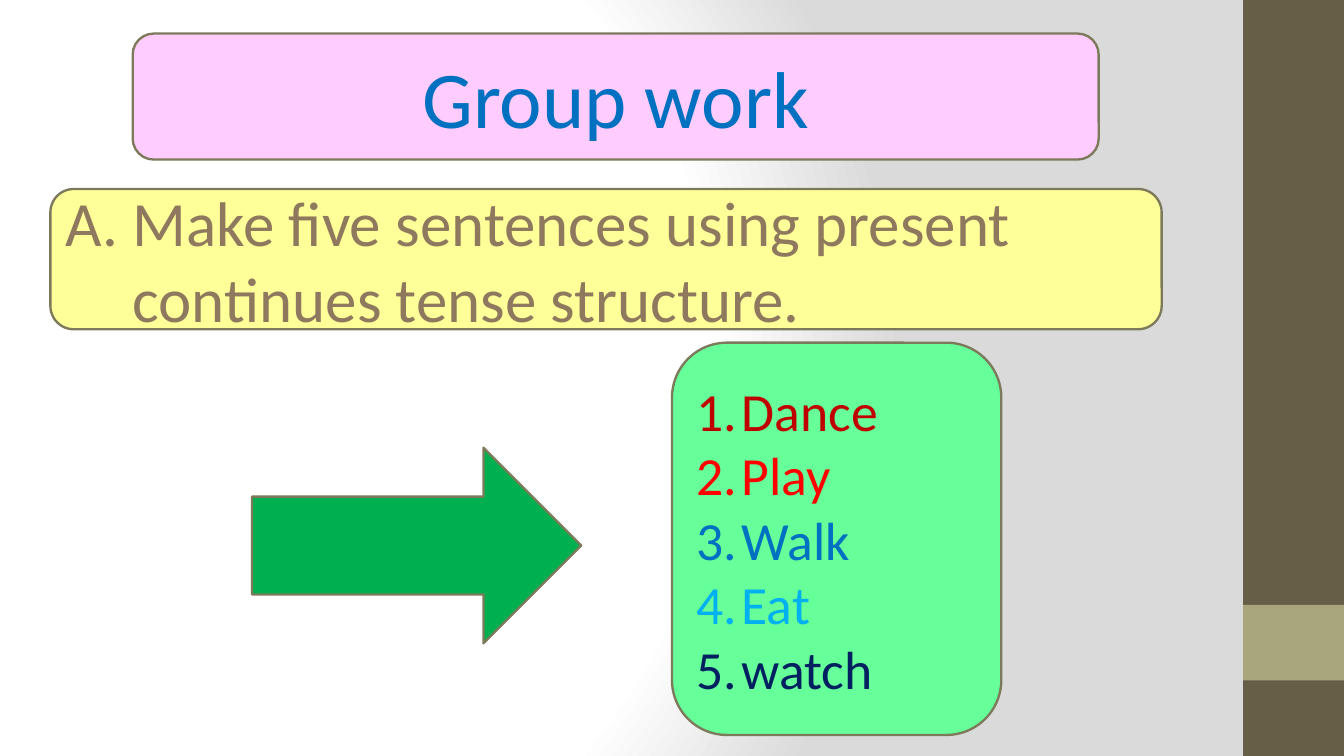
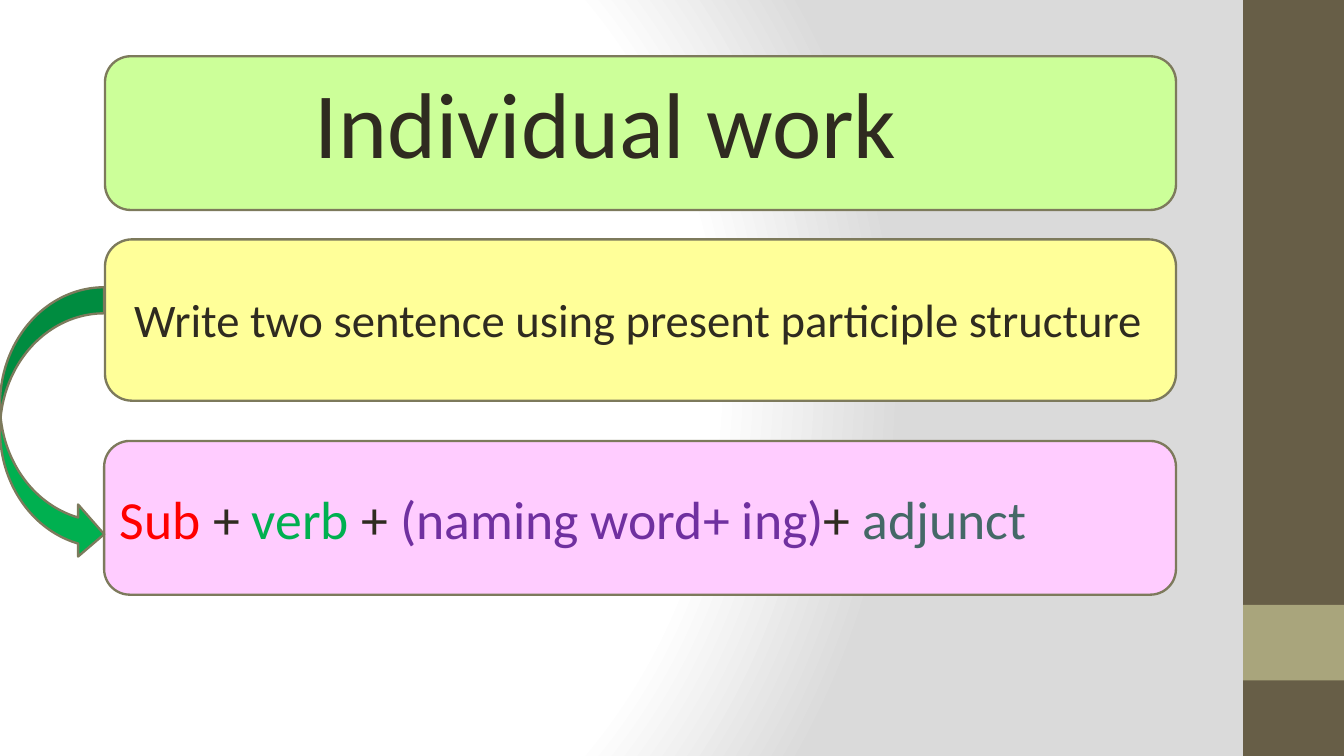
from dataclasses import dataclass

from pptx import Presentation
from pptx.dml.color import RGBColor
from pptx.enum.shapes import MSO_SHAPE as Preset
from pptx.enum.text import MSO_ANCHOR as Anchor, MSO_AUTO_SIZE as AutoSize, PP_ALIGN as Align
from pptx.oxml import parse_xml
from pptx.oxml.ns import nsdecls, qn
from pptx.util import Inches, Pt


@dataclass(frozen=True)
class Theme:
    font: str = "Calibri"
    white: str = "FFFFFF"
    grey: str = "DADADA"
    band: str = "675E47"
    accent: str = "A9A57C"
    outline: str = "7D7A5C"
    ink: str = "2F2B20"
    brown: str = "8E795E"
    pink: str = "FFCCFF"
    yellow: str = "FFFF99"
    mint: str = "66FF99"
    lime: str = "CCFF99"
    green: str = "00B050"
    crimson: str = "C00000"
    red: str = "FF0000"
    blue: str = "0070C0"
    sky: str = "00B0F0"
    navy: str = "002060"
    purple: str = "7030A0"
    teal: str = "456867"
    group_title: int = 69
    individual_title: int = 80
    task: int = 54
    body: int = 46
    note: int = 40


THEME = Theme()


def write(shape, paragraphs, size, color=THEME.ink, align=Align.LEFT,
          anchor=Anchor.MIDDLE, numbering=None, indent=0):
    """Fill a shape with paragraphs, each a list of (text, color) runs or a plain string."""
    frame = shape.text_frame
    frame.word_wrap = True
    frame.vertical_anchor = anchor
    for index, runs in enumerate(paragraphs):
        paragraph = frame.add_paragraph() if index else frame.paragraphs[0]
        paragraph.alignment = align
        if numbering:
            properties = paragraph._p.get_or_add_pPr()
            properties.set("marL", str(Inches(indent)))
            properties.set("indent", str(-Inches(indent)))
            properties.append(parse_xml(f'<a:buFont {nsdecls("a")} typeface="{THEME.font}"/>'))
            properties.append(parse_xml(f'<a:buAutoNum {nsdecls("a")} type="{numbering}"/>'))
        for text, run_color in [(runs, color)] if isinstance(runs, str) else runs:
            run = paragraph.add_run()
            run.text = text
            run.font.name = THEME.font
            run.font.size = Pt(size)
            run.font.color.rgb = RGBColor.from_string(run_color)


class Deck:
    """Hold the presentation, its style and the current slide."""

    def __init__(self, theme):
        """Set the slide size and the shared background."""
        self.theme = theme
        self.presentation = Presentation()
        self.presentation.slide_width = Inches(16)
        self.presentation.slide_height = Inches(9)
        self.slide = None
        self.set_background()

    def set_background(self):
        """Give the slide master a circular gradient."""
        master = self.presentation.slide_master
        master.background.fill.solid()
        properties = master.element.find(".//" + qn("p:bgPr"))
        stops = "".join(
            f'<a:gs pos="{position * 1000}"><a:srgbClr val="{color}"/></a:gs>'
            for position, color in ((0, self.theme.white), (75, self.theme.white),
                                    (100, self.theme.grey)))
        properties.replace(properties[0], parse_xml(
            f'<a:gradFill {nsdecls("a")} rotWithShape="1"><a:gsLst>{stops}</a:gsLst>'
            '<a:path path="circle"><a:fillToRect l="20000" t="50000" r="100000" b="50000"/>'
            '</a:path></a:gradFill>'))

    def add_slide(self):
        """Start a blank slide with the side band."""
        self.slide = self.presentation.slides.add_slide(self.presentation.slide_layouts[6])
        self.shape(Preset.RECTANGLE, 14.8, 0, 1.2, 9, self.theme.band, outlined=False)
        self.shape(Preset.RECTANGLE, 14.8, 7.2, 1.2, 0.9, self.theme.accent, outlined=False)

    def shape(self, preset, left, top, width, height, fill, outlined=True):
        """Add a filled preset shape."""
        shape = self.slide.shapes.add_shape(
            preset, Inches(left), Inches(top), Inches(width), Inches(height))
        shape.shadow.inherit = False
        shape.fill.solid()
        shape.fill.fore_color.rgb = RGBColor.from_string(fill)
        if outlined:
            shape.line.color.rgb = RGBColor.from_string(self.theme.outline)
            shape.line.width = Pt(2)
        else:
            shape.line.fill.background()
        return shape

    def panel(self, left, top, width, height, fill, paragraphs=(), **text_format):
        """Add a rounded panel with optional text."""
        panel = self.shape(Preset.ROUNDED_RECTANGLE, left, top, width, height, fill)
        if paragraphs:
            write(panel, paragraphs, **text_format)

    def text(self, left, top, width, height, paragraphs, **text_format):
        """Add a text box that grows with its text."""
        box = self.slide.shapes.add_textbox(
            Inches(left), Inches(top), Inches(width), Inches(height))
        write(box, paragraphs, anchor=Anchor.TOP, **text_format)
        box.text_frame.auto_size = AutoSize.SHAPE_TO_FIT_TEXT


def build_group_work(deck):
    """Build the group work slide."""
    theme = deck.theme
    deck.add_slide()
    deck.panel(1.58, 0.4, 11.5, 1.5, theme.pink, ["Group work"],
               size=theme.group_title, color=theme.blue, align=Align.CENTER)
    deck.panel(0.6, 2.25, 13.23, 1.67, theme.yellow,
               ["Make five sentences using present continues tense structure."],
               size=theme.task, color=theme.brown, numbering="alphaUcPeriod", indent=0.8)
    verbs = [("Dance", theme.crimson), ("Play", theme.red), ("Walk", theme.blue),
             ("Eat", theme.sky), ("watch", theme.navy)]
    deck.panel(8, 4.08, 3.92, 4.67, theme.mint, [[verb] for verb in verbs],
               size=theme.body, numbering="arabicPeriod", indent=0.54)
    deck.shape(Preset.RIGHT_ARROW, 3, 5.33, 3.92, 2.33, theme.green)


def build_individual_work(deck):
    """Build the individual work slide."""
    theme = deck.theme
    deck.add_slide()
    deck.panel(1.25, 0.67, 12.75, 1.83, theme.lime)
    deck.text(3.65, 0.73, 8.83, 1.45, ["Individual work"], size=theme.individual_title)
    deck.panel(1.25, 2.85, 12.75, 1.92, theme.yellow)
    deck.text(1.5, 3.41, 12.5, 0.77,
              ["Write two sentence using present participle structure"], size=theme.note)
    structure = [("Sub", theme.red), (" + ", theme.ink), ("verb ", theme.green),
                 ("+ ", theme.ink), ("(naming word+ ing)", theme.purple),
                 ("+ ", theme.ink), ("adjunct", theme.teal)]
    deck.panel(1.24, 5.25, 12.76, 1.83, theme.pink, [structure], size=theme.body)
    deck.shape(Preset.CURVED_RIGHT_ARROW, 0, 3.42, 1.24, 3.25, theme.green)


def main():
    """Build and save the presentation."""
    deck = Deck(THEME)
    build_group_work(deck)
    build_individual_work(deck)
    deck.presentation.save("out.pptx")


if __name__ == "__main__":
    main()
